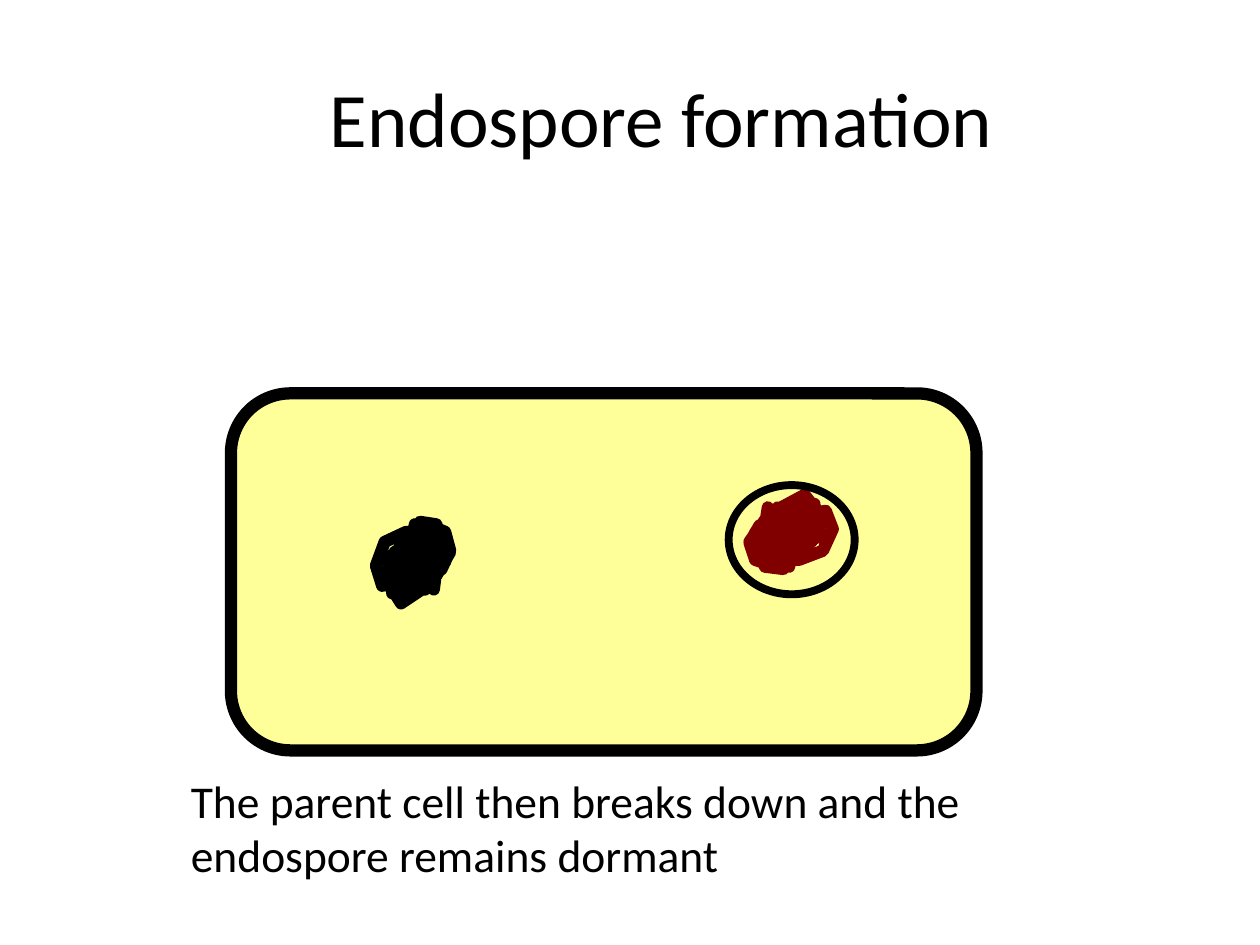
from dataclasses import dataclass

from lxml.etree import SubElement
from pptx import Presentation
from pptx.dml.color import RGBColor
from pptx.enum.shapes import MSO_SHAPE
from pptx.enum.text import MSO_ANCHOR, MSO_AUTO_SIZE, PP_ALIGN
from pptx.oxml.ns import qn
from pptx.util import Pt


@dataclass(frozen=True)
class Theme:
    font: str = "Calibri"
    ink: RGBColor = RGBColor(0, 0, 0)
    cell: RGBColor = RGBColor(0xFF, 0xFF, 0x99)
    spore: RGBColor = RGBColor(0x80, 0, 0)
    title_size: float = 44
    caption_size: float = 26
    thick_line: float = 7
    thin_line: float = 4.5


@dataclass(frozen=True)
class Box:
    """Position and size in points."""
    left: float
    top: float
    width: float
    height: float

    def lengths(self) -> tuple:
        return Pt(self.left), Pt(self.top), Pt(self.width), Pt(self.height)


@dataclass(frozen=True)
class Tangle:
    """A DNA scribble; turned means rotated by half a turn."""
    box: Box
    color: RGBColor
    turned: bool = False


THEME = Theme()
TITLE_BOX = Box(72, 21.6, 612, 90)
CAPTION_BOX = Box(102, 438, 501, 70)
CELL_BOX = Box(132, 224.8, 426, 204)
SPORE_BOX = Box(416.4, 277.2, 72, 62.4)
TANGLES = [
    Tangle(Box(214.8, 291.8, 48.2, 53), THEME.ink),
    Tangle(Box(421.9, 282.8, 54, 48.2), THEME.spore, turned=True),
]

# Course of the DNA thread on a grid of 67 by 74 units
GRID_WIDTH, GRID_HEIGHT = 67, 74
THREAD = [
    (31, 63), (22, 55), (11, 41), (22, 25), (48, 14), (55, 17), (59, 33),
    (48, 52), (37, 36), (44, 39), (46, 52), (39, 55), (31, 41), (26, 30),
    (31, 47), (28, 39), (39, 28), (48, 47), (46, 63), (24, 28), (28, 44),
    (22, 28), (28, 41), (24, 36), (26, 44), (31, 52), (28, 44), (24, 30),
    (28, 22), (39, 52), (37, 63), (22, 39), (26, 28), (37, 39), (35, 52),
    (5, 60), (0, 44), (7, 25), (24, 17), (53, 20), (55, 41), (35, 39),
    (31, 30), (41, 39), (38, 62), (20, 74), (15, 66), (9, 58), (55, 17),
    (59, 32), (52, 47), (35, 52), (15, 33), (28, 25), (46, 36), (41, 30),
    (37, 47), (35, 55), (26, 30), (39, 28), (50, 33), (39, 63), (31, 60),
    (20, 41), (35, 11), (44, 14), (48, 25), (15, 66), (7, 49), (37, 33),
    (46, 47), (39, 52), (24, 47), (31, 11), (26, 68), (13, 66), (15, 41),
    (41, 28), (24, 52), (7, 39), (37, 22), (35, 44), (26, 36), (35, 9),
    (48, 11), (55, 33), (35, 44),
]


def write_text(shape, text: str, *, size: float, align: PP_ALIGN,
               anchor: MSO_ANCHOR, auto_size: MSO_AUTO_SIZE) -> None:
    frame = shape.text_frame
    frame.word_wrap = True
    frame.auto_size = auto_size
    frame.vertical_anchor = anchor
    paragraph = frame.paragraphs[0]
    paragraph.text = text
    paragraph.alignment = align
    paragraph.font.name = THEME.font
    paragraph.font.size = Pt(size)
    paragraph.font.color.rgb = THEME.ink


def style_shape(shape, line_color: RGBColor, line_width: float,
                fill_color: RGBColor | None = None) -> None:
    shape.shadow.inherit = False
    if fill_color is None:
        shape.fill.background()
    else:
        shape.fill.solid()
        shape.fill.fore_color.rgb = fill_color
    shape.line.color.rgb = line_color
    shape.line.width = Pt(line_width)


def draw_tangle(shapes, tangle: Tangle) -> None:
    box = tangle.box
    points = []
    for x, y in THREAD:
        across, down = x / GRID_WIDTH, y / GRID_HEIGHT
        if tangle.turned:
            across, down = 1 - across, 1 - down
        points.append((Pt(box.left + across * box.width),
                       Pt(box.top + down * box.height)))
    builder = shapes.build_freeform(*points[0])
    builder.add_line_segments(points[1:], close=False)
    shape = builder.convert_to_shape()
    style_shape(shape, tangle.color, THEME.thick_line)
    # Round ends and corners
    line = shape.line._get_or_add_ln()
    line.set("cap", "rnd")
    SubElement(line, qn("a:round"))


def main() -> None:
    presentation = Presentation()
    presentation.slide_width, presentation.slide_height = Pt(720), Pt(540)
    slide = presentation.slides.add_slide(presentation.slide_layouts[5])

    # Title
    title = slide.shapes.title
    title.left, title.top, title.width, title.height = TITLE_BOX.lengths()
    write_text(title, "Endospore formation", size=THEME.title_size,
               align=PP_ALIGN.CENTER, anchor=MSO_ANCHOR.MIDDLE,
               auto_size=MSO_AUTO_SIZE.NONE)

    # Parent cell with its DNA and the endospore
    drawing = slide.shapes.add_group_shape().shapes
    cell = drawing.add_shape(MSO_SHAPE.ROUNDED_RECTANGLE, *CELL_BOX.lengths())
    style_shape(cell, THEME.ink, THEME.thick_line, THEME.cell)
    for tangle in TANGLES:
        draw_tangle(drawing, tangle)
    spore = drawing.add_shape(MSO_SHAPE.OVAL, *SPORE_BOX.lengths())
    style_shape(spore, THEME.ink, THEME.thin_line)

    # Caption
    caption = slide.shapes.add_textbox(*CAPTION_BOX.lengths())
    write_text(caption,
               "The parent cell then breaks down and the endospore remains dormant",
               size=THEME.caption_size, align=PP_ALIGN.LEFT, anchor=MSO_ANCHOR.TOP,
               auto_size=MSO_AUTO_SIZE.SHAPE_TO_FIT_TEXT)

    presentation.save("out.pptx")


if __name__ == "__main__":
    main()
